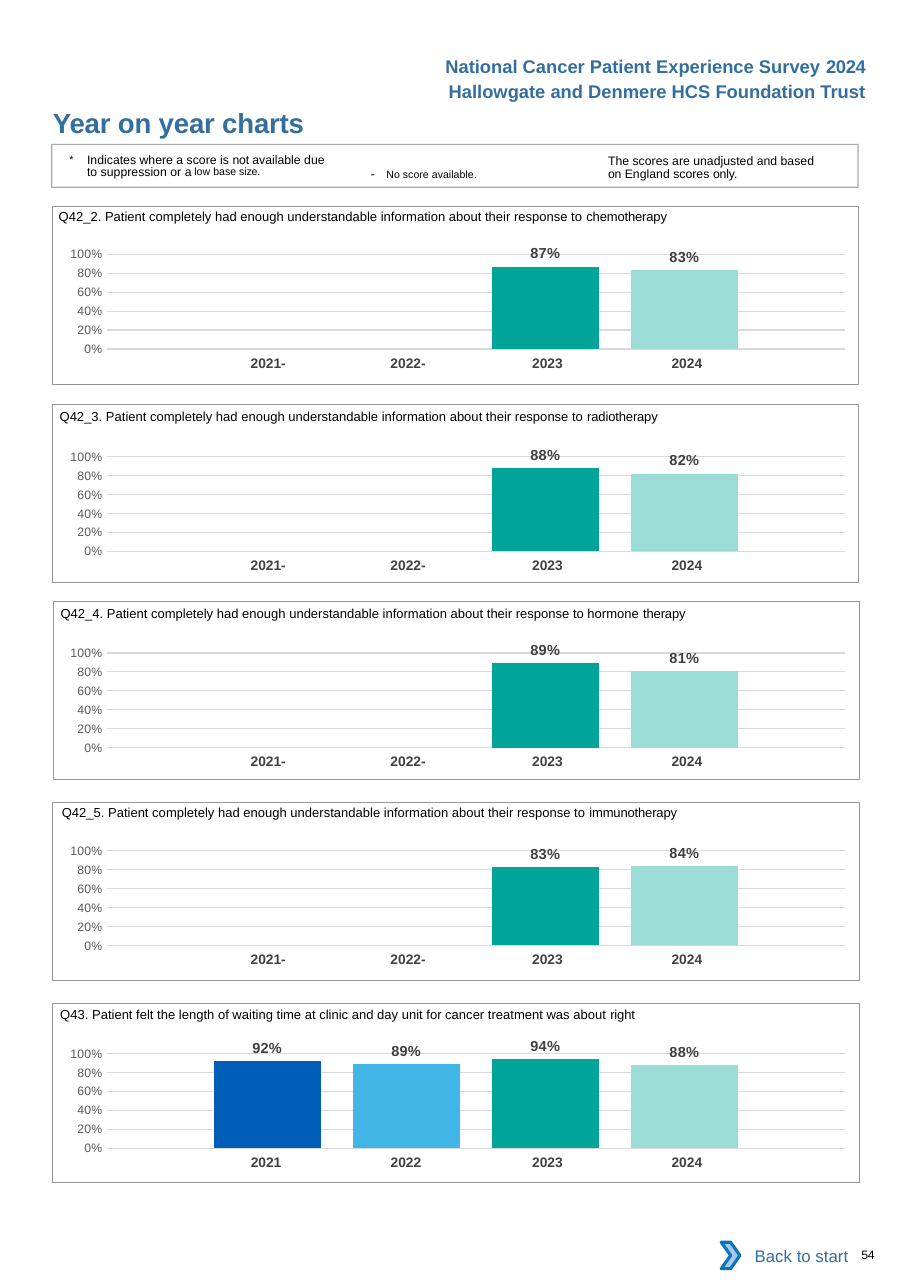
from lxml import etree
from pptx import Presentation
from pptx.chart.data import CategoryChartData
from pptx.dml.color import RGBColor
from pptx.enum.chart import XL_CHART_TYPE as ChartType, XL_LABEL_POSITION as LabelPos, XL_TICK_MARK as Tick
from pptx.enum.shapes import MSO_SHAPE as Preset
from pptx.enum.text import MSO_ANCHOR as Anchor, PP_ALIGN as Align
from pptx.oxml import parse_xml
from pptx.oxml.ns import qn
from pptx.util import Pt

BLUE = RGBColor(0x33, 0x6E, 0x9F)
BLACK = RGBColor(0, 0, 0)
WHITE = RGBColor(0xFF, 0xFF, 0xFF)
FRAME_GREY = RGBColor(0x93, 0x95, 0x98)
YEAR_GREY = RGBColor(0x41, 0x40, 0x42)
LABEL_GREY = RGBColor(0x40, 0x40, 0x40)
AXIS_GREY = RGBColor(0x59, 0x59, 0x59)
GRID_GREY = RGBColor(0xD9, 0xD9, 0xD9)
ARROW_FILL = RGBColor(0xA8, 0xC7, 0xE9)
ARROW_LINE = RGBColor(0x0A, 0x74, 0xBB)
YEAR_COLOURS = [RGBColor(0x00, 0x5E, 0xB8), RGBColor(0x41, 0xB6, 0xE6),
                RGBColor(0x00, 0xA4, 0x99), RGBColor(0x9C, 0xDC, 0xD7)]

YEARS = ["2021", "2022", "2023", "2024"]
YEAR_WIDTHS = [91.4, 91.4, 96.5, 91.4]
YEAR_RIGHT_INSETS = [0, 0, 2.9, 8.6]
INFORMED = "Patient completely had enough understandable information about their response to "
PANELS = [
    {"question": ("Q42_2. " + INFORMED, "chemotherapy"), "scores": [None, None, 0.87, 0.83],
     "frame": (34.3, 134.6), "heading": (38.4, 129.6), "chart_top": 152.8},
    {"question": ("Q42_3. " + INFORMED, "radiotherapy"), "scores": [None, None, 0.88, 0.82],
     "frame": (34, 264.2), "heading": (39, 260.2), "chart_top": 285},
    {"question": ("Q42_4. " + INFORMED + "hormone ", "therapy"), "scores": [None, None, 0.89, 0.81],
     "frame": (34.6, 393), "heading": (39.6, 389), "chart_top": 413.3},
    {"question": ("Q42_5. " + INFORMED, "immunotherapy"), "scores": [None, None, 0.83, 0.84],
     "frame": (34.4, 524.2), "heading": (40.4, 519.1), "chart_top": 542.6},
    {"question": ("Q43. Patient felt the length of waiting time at clinic and day unit "
                  "for cancer treatment was about ", "right"), "scores": [0.92, 0.89, 0.94, 0.88],
     "frame": (34.4, 655.8), "heading": (39.4, 651.2), "chart_top": 675},
]
PANEL_WIDTH, PANEL_HEIGHT = 527, 116.6
CHART_LEFT, CHART_HEIGHT = 28.3, 92.9
YEARS_LEFT, YEARS_DROP, YEARS_HEIGHT = 124.6, 76, 19.4
PLOT = {"x": 0.079, "y": 0.145, "w": 0.915, "h": 0.666}

HEADER = [(32.7, [("National Cancer Patient Experience Survey ", 12), ("2024", 12, -0.2)]),
          (49, [("Hallowgate and Denmere HCS Foundation Trust", 12)])]
SUPPRESSED = [("*\t", 12, 0, 3), ("Indicates where a score is ", 8), ("not ", 8, -0.2),
              ("available due to suppression or ", 8), ("a ", 8, -0.5),
              ("low base", 12, 0, 7), (" size.", 12, -0.1, 7)]
NO_SCORE = [("- ", 8, 2.6), ("No score available", 12, 0, 3), (".", 12, -0.1, 3)]
UNADJUSTED = [("The scores are unadjusted and based", 8), (" on", 8, -0.2),
              (" England scores ", 8), ("only.", 8, -0.1)]


def style(font, size, colour, bold=False):
    font.name, font.size, font.bold = "Arial", Pt(size), bold
    font.color.rgb = colour


def write(paragraph, runs, colour=BLACK, bold=False):
    for text, size, spacing, baseline in [(*run, 0, 0)[:4] for run in runs]:
        run = paragraph.add_run()
        run.text = text
        style(run.font, size, colour, bold)
        props = run.font._element
        if spacing:
            props.set("spc", str(round(spacing * 100)))
        if baseline:
            props.set("baseline", str(baseline * 1000))


def inset(holder, left, top, right, bottom):
    holder.margin_left, holder.margin_top = Pt(left), Pt(top)
    holder.margin_right, holder.margin_bottom = Pt(right), Pt(bottom)


def add_text(box, runs, colour=BLACK, bold=False, insets=(0, 0, 0, 0), align=Align.LEFT, line=None, hang=0):
    frame = slide.shapes.add_textbox(*map(Pt, box)).text_frame
    frame.word_wrap = True
    inset(frame, *insets)
    paragraph = frame.paragraphs[0]
    paragraph.alignment = align
    if line:
        paragraph.line_spacing = Pt(line)
    if hang:
        props = paragraph._p.get_or_add_pPr()
        props.set("marL", str(Pt(hang)))
        props.set("indent", str(-Pt(hang)))
    write(paragraph, runs, colour, bold)


def add_box(preset, box, fill=None, line=None, weight=0.5):
    shape = slide.shapes.add_shape(preset, *map(Pt, box))
    shape.shadow.inherit = False
    if fill is None:
        shape.fill.background()
    else:
        shape.fill.solid()
        shape.fill.fore_color.rgb = fill
    if line is None:
        shape.line.fill.background()
    else:
        shape.line.color.rgb = line
        shape.line.width = Pt(weight)
    return shape


def add_scores(scores, top):
    data = CategoryChartData(number_format="0%")
    data.categories = ["1"]
    for number, score in enumerate(scores, 1):
        data.add_series(f"Series {number}", [score])
    chart = slide.shapes.add_chart(ChartType.COLUMN_CLUSTERED, Pt(CHART_LEFT), Pt(top),
                                   Pt(PANEL_WIDTH), Pt(CHART_HEIGHT), data).chart
    chart.has_legend = chart.has_title = False
    chart.font.name, chart.font.size = "Calibri", Pt(10)
    chart.font.color.rgb = BLACK
    chart.category_axis.visible = False

    percent = chart.value_axis
    percent.minimum_scale, percent.maximum_scale, percent.major_unit = 0, 1, 0.2
    percent.major_tick_mark = percent.minor_tick_mark = Tick.NONE
    percent.format.line.fill.background()
    percent.major_gridlines.format.line.color.rgb = GRID_GREY
    percent.major_gridlines.format.line.width = Pt(0.75)
    percent.tick_labels.number_format = "0%"
    percent.tick_labels.number_format_is_linked = False
    style(percent.tick_labels.font, 8, AXIS_GREY)

    columns = chart.plots[0]
    columns.gap_width, columns.overlap, columns.vary_by_categories = 200, -30, False
    for series, colour in zip(columns.series, YEAR_COLOURS):
        series.format.fill.solid()
        series.format.fill.fore_color.rgb = colour
        labels = series.data_labels
        labels.show_value = True
        labels.position = LabelPos.OUTSIDE_END
        labels.number_format, labels.number_format_is_linked = "0%", False
        style(labels.font, 9.5, LABEL_GREY, True)

    area = chart._chartSpace.chart.plotArea
    for old in area.findall(qn("c:layout")):
        area.remove(old)
    parts = '<c:layoutTarget val="inner"/><c:xMode val="edge"/><c:yMode val="edge"/>'
    parts += "".join(f'<c:{key} val="{value}"/>' for key, value in PLOT.items())
    area.insert(0, parse_xml('<c:layout xmlns:c="http://schemas.openxmlformats.org/drawingml/2006/chart">'
                             f"<c:manualLayout>{parts}</c:manualLayout></c:layout>"))


def add_years(scores, top):
    table = slide.shapes.add_table(1, len(YEARS), Pt(YEARS_LEFT), Pt(top),
                                   Pt(sum(YEAR_WIDTHS)), Pt(YEARS_HEIGHT)).table
    table.first_row = table.horz_banding = False
    table._tbl.tblPr.find(qn("a:tableStyleId")).text = "{2D5ABB26-0587-4C30-8999-92F81FD0307C}"
    for column, (year, score) in enumerate(zip(YEARS, scores)):
        table.columns[column].width = Pt(YEAR_WIDTHS[column])
        cell = table.cell(0, column)
        cell.fill.background()
        inset(cell, 10 if score is None else 7.2, 3.6, YEAR_RIGHT_INSETS[column], 3.6)
        paragraph = cell.text_frame.paragraphs[0]
        paragraph.alignment = Align.CENTER
        write(paragraph, [(year if score is not None else year + "-", 9)], YEAR_GREY, True)


deck = Presentation()
deck.slide_width, deck.slide_height = Pt(594.72), Pt(841.68)
slide = deck.slides.add_slide(deck.slide_layouts[6])

for top, runs in HEADER:
    add_text((250, top, 323, 21.6), runs, BLUE, True, (7.2, 3.6, 7.2, 3.6), Align.RIGHT)
add_text((34.6, 69.1, 324, 21.6), [("Year on year charts", 18, -0.1)], BLUE, True)

key_frame = add_box(Preset.RECTANGLE, (33.8, 94.3, PANEL_WIDTH, 28.1), line=FRAME_GREY, weight=0.75)
etree.SubElement(key_frame.line.fill._xPr.find(".//" + qn("a:srgbClr")), qn("a:alpha")).set("val", "80000")
add_text((45.4, 99.4, 173, 20), SUPPRESSED, insets=(0, 2.2, 0, 0), line=8.1, hang=11.5)
add_text((235.4, 101.2, 131.8, 17.3), NO_SCORE, insets=(7.2, 3.6, 7.2, 3.6))
add_text((397.4, 99.6, 143, 19.4), UNADJUSTED, insets=(0, 2.2, 0, 0), line=8.1)

for panel in PANELS:
    add_scores(panel["scores"], panel["chart_top"])
    add_years(panel["scores"], panel["chart_top"] + YEARS_DROP)
    add_box(Preset.RECTANGLE, (*panel["frame"], PANEL_WIDTH, PANEL_HEIGHT), line=FRAME_GREY)
    opening, ending = panel["question"]
    add_text((*panel["heading"], 520, 17.3), [(opening, 8.5), (ending, 8.5, -0.1)], insets=(0, 6.5, 0, 0))

back = add_box(Preset.RECTANGLE, (476.6, 805.2, 85, 30.2), fill=WHITE).text_frame
back.vertical_anchor = Anchor.MIDDLE
back.paragraphs[0].alignment = Align.RIGHT
write(back.paragraphs[0], [("Back to start", 11)], BLUE)
add_box(Preset.CHEVRON, (471.4, 811.8, 12.2, 17.3), ARROW_FILL, ARROW_LINE, 2)
add_text((563, 815.4, 30, 9.4), [("54", 8, -0.2)])

deck.save("out.pptx")
